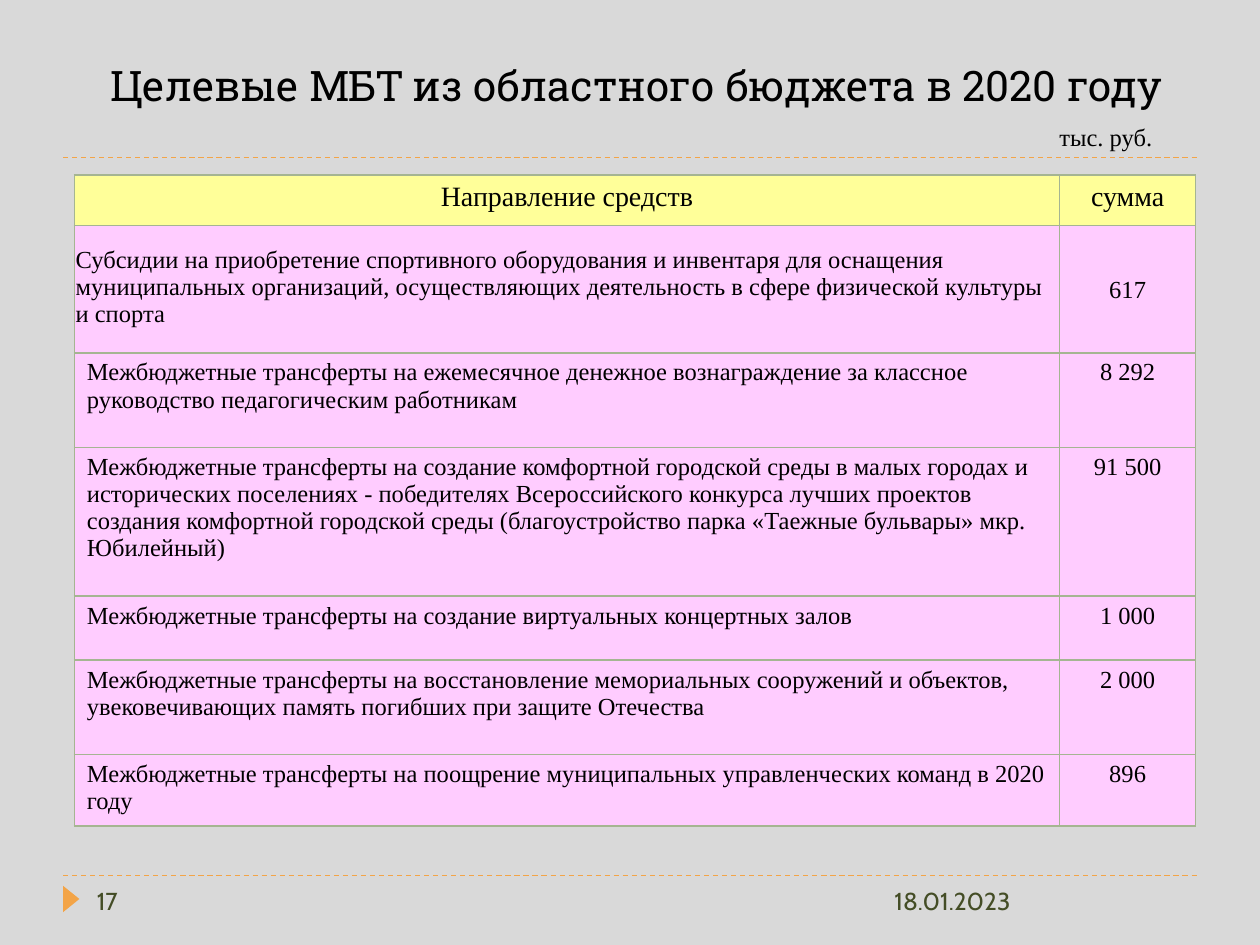
from lxml import etree
from pptx import Presentation
from pptx.dml.color import RGBColor
from pptx.enum.dml import MSO_LINE
from pptx.enum.shapes import MSO_CONNECTOR, MSO_SHAPE
from pptx.enum.text import MSO_ANCHOR, PP_ALIGN
from pptx.oxml import parse_xml
from pptx.oxml.ns import nsdecls, qn
from pptx.util import Inches, Pt

STRAIGHT = MSO_CONNECTOR.STRAIGHT
TRIANGLE = MSO_SHAPE.ISOSCELES_TRIANGLE
DASH = MSO_LINE.DASH
LEFT, CENTER = PP_ALIGN.LEFT, PP_ALIGN.CENTER
TOP, MIDDLE, BOTTOM = MSO_ANCHOR.TOP, MSO_ANCHOR.MIDDLE, MSO_ANCHOR.BOTTOM

GREY = RGBColor(0xD9, 0xD9, 0xD9)
ORANGE = RGBColor(0xF3, 0xA4, 0x47)
OLIVE = RGBColor(0x44, 0x4D, 0x26)
BLACK = RGBColor(0, 0, 0)
YELLOW = RGBColor(0xFF, 0xFF, 0x99)
PINK = RGBColor(0xFF, 0xCC, 0xFF)
BORDER = RGBColor(0xA5, 0xB5, 0x92)

WIDTH, HEIGHT = 10, 7.5
MARGIN = 0.05 * WIDTH
FOOTER_TOP = 6.95
TITLE = {"name": "Roboto Slab", "size": Pt(24), "color": BLACK}
HEADER = {"name": "Times New Roman", "size": Pt(16), "color": BLACK}
BODY = {**HEADER, "size": Pt(14)}
FOOTER = {"name": "Cabin", "size": Pt(14), "color": OLIVE}

COLUMNS = [7.82, 1.08]
ROWS = [
    (0.4, "Направление средств", "сумма"),
    (1.01, "Субсидии на приобретение спортивного оборудования и инвентаря для "
     "оснащения муниципальных организаций, осуществляющих деятельность в сфере "
     "физической культуры и спорта", "617"),
    (0.75, "Межбюджетные трансферты на ежемесячное денежное вознаграждение за "
     "классное руководство педагогическим работникам", "8 292"),
    (1.18, "Межбюджетные трансферты на создание комфортной городской среды в "
     "малых городах и исторических поселениях - победителях Всероссийского "
     "конкурса лучших проектов создания комфортной городской среды "
     "(благоустройство парка «Таежные бульвары» мкр. Юбилейный)", "91 500"),
    (0.51, "Межбюджетные трансферты на создание виртуальных концертных залов",
     "1 000"),
    (0.75, "Межбюджетные трансферты на восстановление мемориальных сооружений и "
     "объектов, увековечивающих память погибших при защите Отечества", "2 000"),
    (0.53, "Межбюджетные трансферты на поощрение муниципальных управленческих "
     "команд в 2020 году", "896"),
]


def write_text(tf, text, fmt, align):
    """Fill a text frame with one formatted run."""
    p = tf.paragraphs[0]
    p.alignment = align
    r = p.add_run()
    r.text = text
    for key, value in fmt.items():
        if key == "color":
            r.font.color.rgb = value
        else:
            setattr(r.font, key, value)


def add_text(s, box, text, fmt, align=LEFT, anchor=TOP):
    """Add a wrapping text box."""
    tf = s.shapes.add_textbox(*map(Inches, box)).text_frame
    tf.word_wrap = True
    tf.vertical_anchor = anchor
    write_text(tf, text, fmt, align)


def add_rule(s, y):
    """Add a dashed rule between the side margins."""
    ends = map(Inches, (MARGIN, y, WIDTH - MARGIN, y))
    line = s.shapes.add_connector(STRAIGHT, *ends)
    line.line.color.rgb = ORANGE
    line.line.width = Pt(0.75)
    line.line.dash_style = DASH
    etree.SubElement(line._element.spPr, qn("a:effectLst"))


def add_marker(s):
    """Add the triangle that points at the page number."""
    sp = s.shapes.add_shape(TRIANGLE, *map(Inches, (0.46, 7.07, 0.21, 0.13)))
    sp.rotation = 90
    sp.shadow.inherit = False
    sp.fill.solid()
    sp.fill.fore_color.rgb = ORANGE
    sp.line.fill.background()


def set_borders(cell):
    """Draw a thin line on all four sides of a cell."""
    tc_pr = cell._tc.get_or_add_tcPr()
    for i, side in enumerate(("lnL", "lnR", "lnT", "lnB")):
        tc_pr.insert(i, parse_xml(
            f'<a:{side} {nsdecls("a")} w="{Pt(1)}"><a:solidFill>'
            f'<a:srgbClr val="{BORDER}"/></a:solidFill></a:{side}>'))


def format_cell(cell, row, col):
    """Set fill, borders, anchor and insets by place in the table."""
    cell.fill.solid()
    cell.fill.fore_color.rgb = PINK if row else YELLOW
    set_borders(cell)
    if row == 1:
        fmt = {
            "vertical_anchor": MIDDLE if col else BOTTOM,
            "margin_left": Inches(0.01),
            "margin_right": Inches(0.01),
            "margin_top": Inches(0.01),
            "margin_bottom": Inches(0 if col else 0.2),
        }
        for key, value in fmt.items():
            setattr(cell, key, value)


def add_budget_table(s):
    """Add the table of transfers and sums."""
    box = (0.59, 1.39, sum(COLUMNS), sum(row[0] for row in ROWS))
    table = s.shapes.add_table(len(ROWS), len(COLUMNS),
                               *map(Inches, box)).table
    for column, width in zip(table.columns, COLUMNS):
        column.width = Inches(width)
    for i, (height, *texts) in enumerate(ROWS):
        table.rows[i].height = Inches(height)
        for j, text in enumerate(texts):
            cell = table.cell(i, j)
            align = LEFT if i and not j else CENTER
            format_cell(cell, i, j)
            write_text(cell.text_frame, text, BODY if i else HEADER, align)


def main():
    """Build and save the slide."""
    prs = Presentation()
    prs.slide_width, prs.slide_height = Inches(WIDTH), Inches(HEIGHT)
    s = prs.slides.add_slide(prs.slide_layouts[6])
    s.background.fill.solid()
    s.background.fill.fore_color.rgb = GREY
    for y in (FOOTER_TOP, HEIGHT / 6):
        add_rule(s, y)
    add_marker(s)
    add_text(s, (0.59, 0.17, 8.91, 0.75),
             "Целевые МБТ из областного бюджета в 2020 году",
             TITLE, CENTER, BOTTOM)
    add_text(s, (7, FOOTER_TOP, 2.5, 0.4), "18.01.2023", FOOTER, anchor=MIDDLE)
    add_text(s, (0.67, FOOTER_TOP, 2.17, 0.4), "17", FOOTER, anchor=MIDDLE)
    add_budget_table(s)
    add_text(s, (8.31, 0.92, 1.34, 0.34), "тыс. руб.", BODY)
    prs.save("out.pptx")


if __name__ == "__main__":
    main()
